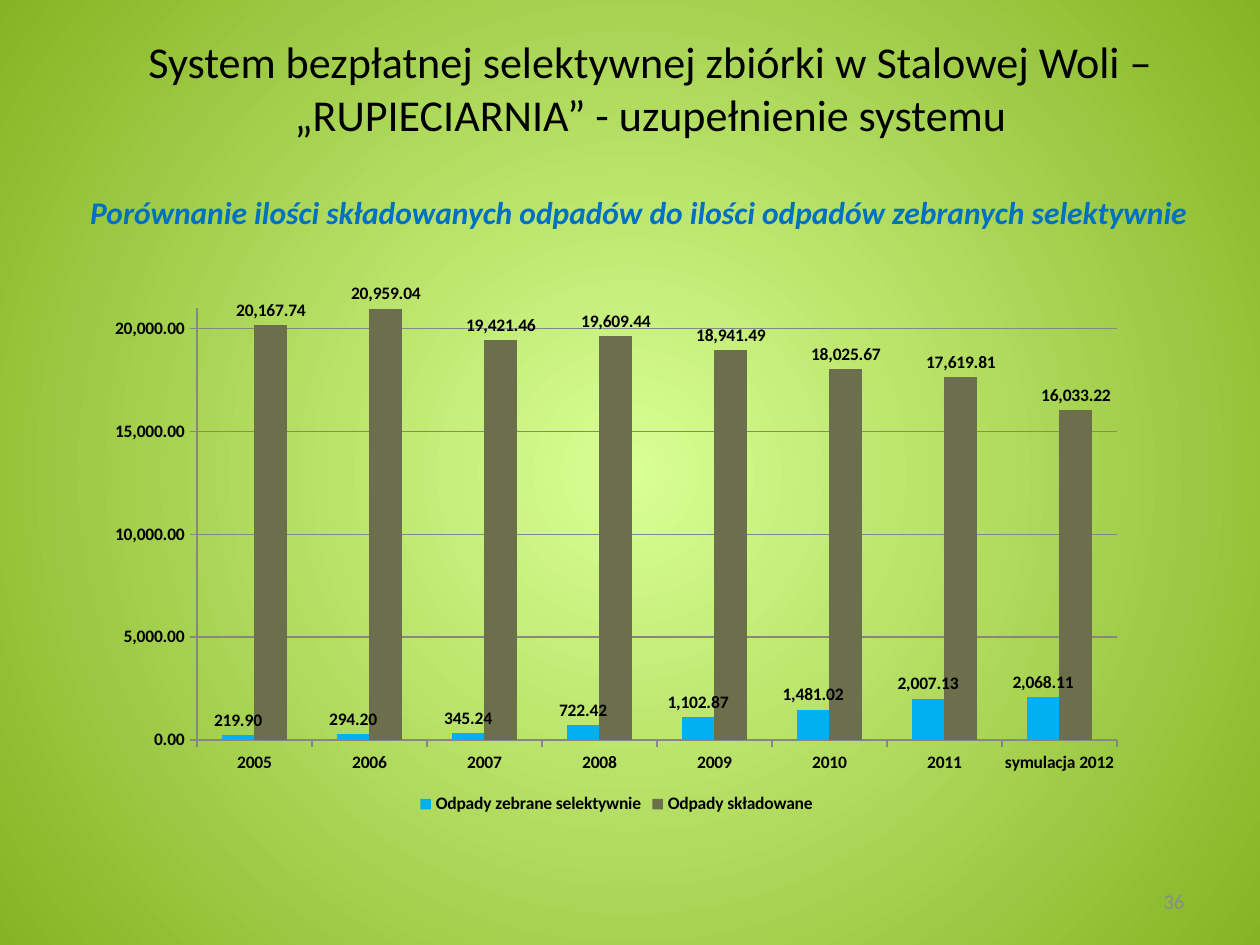
from lxml import etree
from pptx import Presentation
from pptx.chart.data import CategoryChartData
from pptx.dml.color import RGBColor
from pptx.enum.chart import XL_CHART_TYPE, XL_LABEL_POSITION, XL_LEGEND_POSITION, XL_TICK_MARK
from pptx.enum.text import MSO_ANCHOR, PP_ALIGN
from pptx.oxml.ns import qn
from pptx.util import Pt

COLUMNS = XL_CHART_TYPE.COLUMN_CLUSTERED
OUTSIDE_END = XL_LABEL_POSITION.OUTSIDE_END
BOTTOM = XL_LEGEND_POSITION.BOTTOM
TICK_OUT = XL_TICK_MARK.OUTSIDE
TOP, MIDDLE = MSO_ANCHOR.TOP, MSO_ANCHOR.MIDDLE
CENTER, RIGHT = PP_ALIGN.CENTER, PP_ALIGN.RIGHT

FONT = "Calibri"
NUMBER_FORMAT = "#,##0.00"
COLORS = {
    "glow": "D9FF95",
    "edge": "84B423",
    "text": "000000",
    "subtitle": "0070C0",
    "grid": "868686",
    "number": "8B8B8B",
    "collected": "00B0F0",
    "stored": "6C6F4C",
}
TEXTS = [
    ("System bezpłatnej selektywnej zbiórki w Stalowej Woli – „RUPIECIARNIA” - uzupełnienie systemu",
     (115, 37, 1071, 100), MIDDLE, CENTER, "text", {"size": Pt(25.2)}),
    ("Porównanie ilości składowanych odpadów do ilości odpadów zebranych selektywnie",
     (64, 187, 1150, 50), TOP, CENTER, "subtitle", {"size": Pt(18), "bold": True, "italic": True}),
    ("36", (903, 876, 294, 50), MIDDLE, RIGHT, "number", {"size": Pt(12)}),
]
YEARS = ["2005", "2006", "2007", "2008", "2009", "2010", "2011", "symulacja 2012"]
SERIES = [
    ("Odpady zebrane selektywnie", "collected",
     [219.9, 294.2, 345.24, 722.42, 1102.87, 1481.02, 2007.13, 2068.11]),
    ("Odpady składowane", "stored",
     [20167.74, 20959.04, 19421.46, 19609.44, 18941.49, 18025.67, 17619.81, 16033.22]),
]
CHART_BOX = (95, 284, 1043, 535)
PLOT_BOX = (197, 307, 920, 433)


def px(value):
    return round(value * 914400 / 126)


def rgb(name):
    return RGBColor.from_string(COLORS[name])


def style_font(font, color, values):
    for key, value in {"name": FONT, **values}.items():
        setattr(font, key, value)
    font.color.rgb = rgb(color)


def paint_background(page):
    fill = page.background.fill
    fill.gradient()
    for stop, name, position in zip(fill.gradient_stops, ("glow", "edge"), (0, 1)):
        stop.color.rgb = rgb(name)
        stop.position = position
    gradient = page.element.find(".//" + qn("a:gradFill"))
    gradient.remove(gradient.find(qn("a:lin")))
    circle = etree.SubElement(gradient, qn("a:path"), {"path": "circle"})
    etree.SubElement(circle, qn("a:fillToRect"), dict.fromkeys("ltrb", "50000"))


def add_text(page, text, place, anchor, align, color, values):
    box = page.shapes.add_textbox(*map(px, place))
    frame = box.text_frame
    frame.word_wrap = True
    frame.vertical_anchor = anchor
    para = frame.paragraphs[0]
    para.alignment = align
    span = para.add_run()
    span.text = text
    style_font(span.font, color, values)


def place_plot(chart):
    left, top, width, height = CHART_BOX
    x, y, w, h = PLOT_BOX
    plot_area = chart.element.find(".//" + qn("c:plotArea"))
    layout = plot_area.find(qn("c:layout"))
    if layout is None:
        layout = etree.Element(qn("c:layout"))
        plot_area.insert(0, layout)
    manual = etree.SubElement(layout, qn("c:manualLayout"))
    settings = {
        "layoutTarget": "inner", "xMode": "edge", "yMode": "edge",
        "x": (x - left) / width, "y": (y - top) / height,
        "w": w / width, "h": h / height,
    }
    for key, value in settings.items():
        etree.SubElement(manual, qn("c:" + key), val=str(value))


def add_waste_chart(page):
    data = CategoryChartData(number_format=NUMBER_FORMAT)
    data.categories = YEARS
    for name, color, values in SERIES:
        data.add_series(name, values)
    chart = page.shapes.add_chart(COLUMNS, *map(px, CHART_BOX), data).chart
    chart.has_title = False
    bold = {"size": Pt(10), "bold": True}
    style_font(chart.font, "text", bold)

    chart.has_legend = True
    chart.legend.position = BOTTOM
    chart.legend.include_in_layout = False
    style_font(chart.legend.font, "text", bold)

    plot = chart.plots[0]
    plot.vary_by_categories = False
    plot.gap_width = 150
    plot.overlap = 0
    for series, (name, color, values) in zip(plot.series, SERIES):
        series.format.fill.solid()
        series.format.fill.fore_color.rgb = rgb(color)
        labels = series.data_labels
        labels.show_value = True
        labels.number_format = NUMBER_FORMAT
        labels.number_format_is_linked = False
        labels.position = OUTSIDE_END
        style_font(labels.font, "text", bold)

    amounts = chart.value_axis
    amounts.minimum_scale = 0
    amounts.maximum_scale = 21000
    amounts.major_unit = 5000
    amounts.has_major_gridlines = True
    amounts.tick_labels.number_format = NUMBER_FORMAT
    amounts.tick_labels.number_format_is_linked = False
    for axis in (chart.category_axis, amounts):
        axis.major_tick_mark = TICK_OUT
        style_font(axis.tick_labels.font, "text", bold)
    for item in (chart.category_axis, amounts, amounts.major_gridlines):
        item.format.line.color.rgb = rgb("grid")
        item.format.line.width = Pt(0.75)
    place_plot(chart)


def main():
    deck = Presentation()
    deck.slide_width, deck.slide_height = px(1260), px(945)
    page = deck.slides.add_slide(deck.slide_layouts[6])
    paint_background(page)
    for item in TEXTS:
        add_text(page, *item)
    add_waste_chart(page)
    deck.save("out.pptx")


if __name__ == "__main__":
    main()
